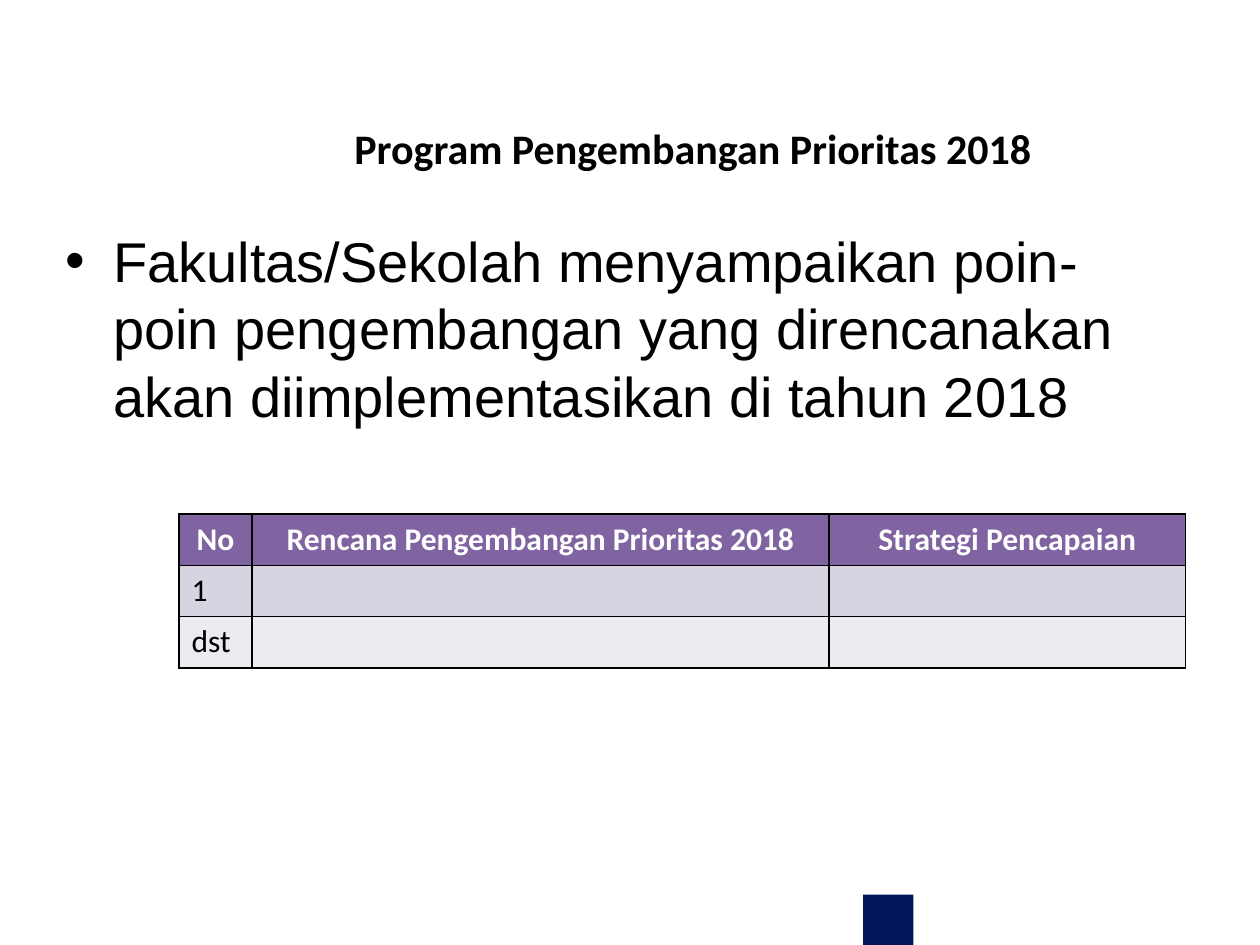
import pptx
import pptx.util
import pptx.dml.color
import pptx.enum.shapes
import pptx.enum.text
import pptx.oxml
import pptx.oxml.ns
import lxml.etree

COLORS = {
    "ink": "000000",
    "navy": "02165B",
    "header": "8064A2",
    "header_text": "FFFFFF",
    "odd_row": "D8D3E0",
    "even_row": "EDEAF0",
}

deck = pptx.Presentation()
deck.slide_width = pptx.util.Inches(10)
deck.slide_height = pptx.util.Inches(7.5)
slide = deck.slides.add_slide(deck.slide_layouts[6])
CENTER = pptx.enum.text.PP_ALIGN.CENTER


def area(left, top, width, height):
    return (
        int(deck.slide_width * left / 100),
        int(deck.slide_height * top / 100),
        int(deck.slide_width * width / 100),
        int(deck.slide_height * height / 100),
    )


def write(paragraph, text, size, font, color, bold=False):
    run = paragraph.add_run()
    run.text = text
    run.font.size = pptx.util.Pt(size)
    run.font.name = font
    run.font.bold = bold
    run.font.color.rgb = pptx.dml.color.RGBColor.from_string(COLORS[color])


footer_mark = slide.shapes.add_shape(
    pptx.enum.shapes.MSO_SHAPE.RECTANGLE, *area(68.5, 94.67, 4, 5.33)
)
footer_mark.shadow.inherit = False
footer_mark.fill.solid()
footer_mark.fill.fore_color.rgb = pptx.dml.color.RGBColor.from_string(COLORS["navy"])
footer_mark.line.fill.background()

title = slide.shapes.add_textbox(*area(22.5, 12.27, 65, 6.67)).text_frame
title.word_wrap = True
title.paragraphs[0].alignment = CENTER
write(title.paragraphs[0], "Program Pengembangan Prioritas 2018", 24, "Calibri", "ink", True)

guidance = slide.shapes.add_textbox(*area(4.2, 23.33, 90, 60.4)).text_frame
guidance.word_wrap = True
point = guidance.paragraphs[0]
point_format = point._p.get_or_add_pPr()
point_format.set("marL", str(pptx.util.Inches(0.38)))
point_format.set("indent", str(-pptx.util.Inches(0.38)))
bullet_font = lxml.etree.SubElement(point_format, pptx.oxml.ns.qn("a:buFont"))
bullet_font.set("typeface", "Arial")
bullet = lxml.etree.SubElement(point_format, pptx.oxml.ns.qn("a:buChar"))
bullet.set("char", "•")
write(
    point,
    "Fakultas/Sekolah menyampaikan poin-poin pengembangan yang direncanakan akan diimplementasikan di tahun 2018",
    32,
    "Arial",
    "ink",
)

plan_rows = [
    ("header", ["No", "Rencana Pengembangan Prioritas 2018", "Strategi Pencapaian"]),
    ("odd_row", ["1", "", ""]),
    ("even_row", ["dst", "", ""]),
]
column_shares = [5.8, 45.8, 28.3]
plan = slide.shapes.add_table(
    len(plan_rows), len(column_shares), *area(14.2, 54.4, sum(column_shares), 16.27)
).table
for column, share in zip(plan.columns, column_shares):
    column.width = int(deck.slide_width * share / 100)

for row_index, (band, entries) in enumerate(plan_rows):
    is_header = band == "header"
    for column_index, entry in enumerate(entries):
        cell = plan.cell(row_index, column_index)
        cell_format = cell._tc.get_or_add_tcPr()
        for side in ("lnL", "lnR", "lnT", "lnB"):
            border = lxml.etree.SubElement(cell_format, pptx.oxml.ns.qn(f"a:{side}"))
            border.set("w", str(pptx.util.Pt(1)))
            stroke = lxml.etree.SubElement(border, pptx.oxml.ns.qn("a:solidFill"))
            tint = lxml.etree.SubElement(stroke, pptx.oxml.ns.qn("a:srgbClr"))
            tint.set("val", COLORS["ink"])
        cell.fill.solid()
        cell.fill.fore_color.rgb = pptx.dml.color.RGBColor.from_string(COLORS[band])
        if entry:
            paragraph = cell.text_frame.paragraphs[0]
            if is_header:
                paragraph.alignment = CENTER
            write(paragraph, entry, 18, "Calibri", "header_text" if is_header else "ink", is_header)

deck.save("out.pptx")
